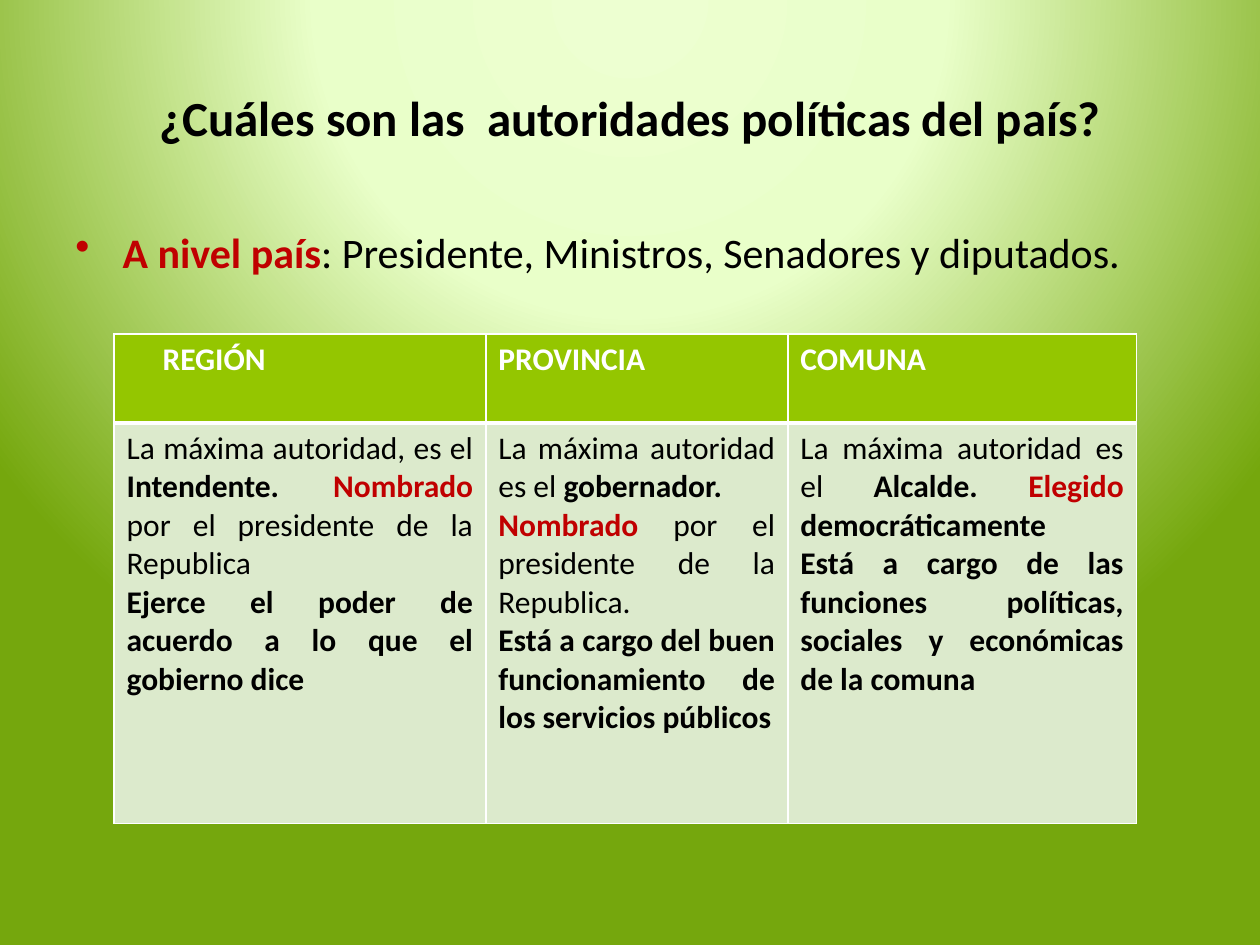
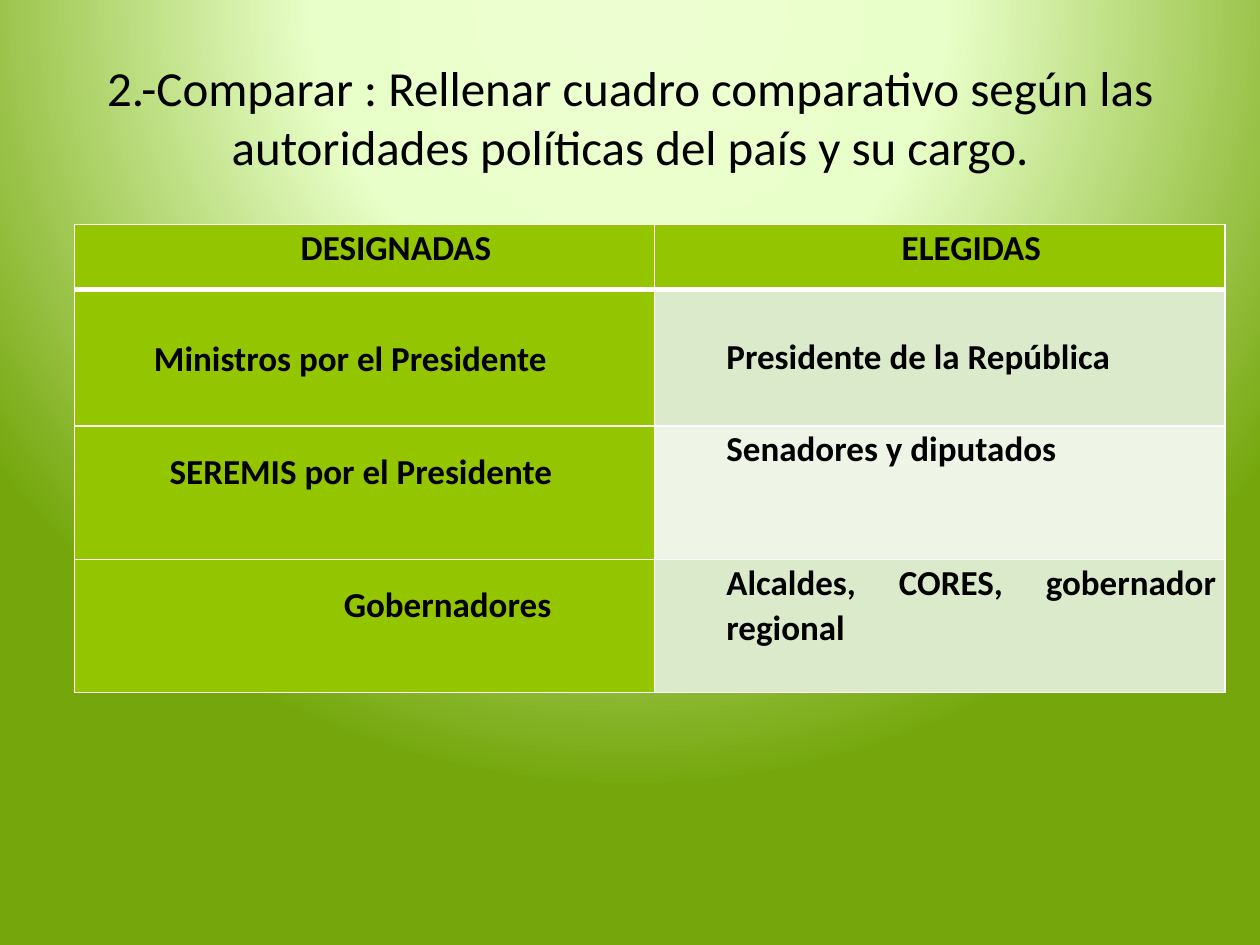
"""Build two slides about the political authorities of a country."""
from dataclasses import dataclass

import lxml.etree
import pptx
import pptx.dml.color
import pptx.enum.text
import pptx.oxml
import pptx.oxml.ns
import pptx.util

Pt = pptx.util.Pt
Align = pptx.enum.text.PP_ALIGN
Anchor = pptx.enum.text.MSO_ANCHOR
qn = pptx.oxml.ns.qn

FONT = "Calibri"
BLACK, WHITE, RED = "000000", "FFFFFF", "C00000"
GREEN, PALE, LIGHT = "94C600", "DCEACC", "EEF5E7"
GLOW = [(0, "EDFFD1"), (40, "E9FFC9"), (100, "75A70D")]


@dataclass
class Run:
    text: str
    bold: bool = True
    color: str = BLACK


@dataclass
class Cell:
    lines: list[list[Run]]
    fill: str
    align: Align = Align.JUSTIFY
    indent: float = 0
    top: float = 3.6


@dataclass
class Grid:
    left: float
    top: float
    cols: list[float]
    rows: list[float]
    cells: list[list[Cell]]
    size: float
    side: float = 7.2
    space: float = 1.0


def hue(code: str) -> pptx.dml.color.RGBColor:
    return pptx.dml.color.RGBColor.from_string(code)


def write(frame, lines: list[list[Run]], *, size: float, align=Align.LEFT,
          space: float = 1.0, indent: float = 0, hang: float = 0,
          before: float = 0, bullet: str = "") -> None:
    frame.word_wrap = True
    for i, line in enumerate(lines):
        para = frame.paragraphs[0] if i == 0 else frame.add_paragraph()
        para.alignment, para.line_spacing = align, space
        para.space_before = Pt(before)
        props = para._p.get_or_add_pPr()
        props.set("marL", str(Pt(indent)))
        props.set("indent", str(Pt(-hang)))
        if bullet:
            mark = lxml.etree.SubElement(props, qn("a:buChar"))
            mark.set("char", bullet)
        for part in line:
            run = para.add_run()
            run.text = part.text
            run.font.name, run.font.size = FONT, Pt(size)
            run.font.bold = part.bold
            run.font.color.rgb = hue(part.color)


def border(cell, widths: dict[str, float]) -> None:
    props = cell._tc.get_or_add_tcPr()
    for i, (side, width) in enumerate(widths.items()):
        line = lxml.etree.Element(qn(f"a:ln{side}"), w=str(Pt(width)))
        fill = lxml.etree.SubElement(line, qn("a:solidFill"))
        lxml.etree.SubElement(fill, qn("a:srgbClr"), val=WHITE)
        props.insert(i, line)


def paint(master) -> None:
    master.background.fill.solid()
    props = master._element.find(".//" + qn("p:bgPr"))
    props.remove(props.find(qn("a:solidFill")))
    grad = lxml.etree.Element(qn("a:gradFill"), rotWithShape="1")
    stops = lxml.etree.SubElement(grad, qn("a:gsLst"))
    for spot, code in GLOW:
        stop = lxml.etree.SubElement(stops, qn("a:gs"), pos=str(spot * 1000))
        lxml.etree.SubElement(stop, qn("a:srgbClr"), val=code)
    shade = lxml.etree.SubElement(grad, qn("a:path"))
    shade.set("path", "circle")
    lxml.etree.SubElement(shade, qn("a:fillToRect"),
                          l="50000", t="-80000", r="50000", b="180000")
    props.insert(0, grad)


def start(deck, title: str, bold: bool):
    slide = deck.slides.add_slide(deck.slide_layouts[5])
    head = slide.shapes.title
    head.left, head.top, head.width, head.height = map(Pt, (36, 21.6, 648, 90))
    frame = head.text_frame
    frame.auto_size = pptx.enum.text.MSO_AUTO_SIZE.NONE
    frame.vertical_anchor = Anchor.MIDDLE
    write(frame, [[Run(title, bold)]], size=28, align=Align.CENTER)
    return slide


def draw(slide, grid: Grid) -> None:
    table = slide.shapes.add_table(
        len(grid.rows), len(grid.cols), Pt(grid.left), Pt(grid.top),
        Pt(sum(grid.cols)), Pt(sum(grid.rows))).table
    table.horz_banding = False
    for col, width in zip(table.columns, grid.cols):
        col.width = Pt(width)
    for r, (row, height) in enumerate(zip(table.rows, grid.rows)):
        row.height = Pt(height)
        for cell, item in zip(row.cells, grid.cells[r]):
            cell.margin_left = cell.margin_right = Pt(grid.side)
            cell.margin_top, cell.margin_bottom = Pt(item.top), 0
            cell.fill.solid()
            cell.fill.fore_color.rgb = hue(item.fill)
            border(cell, {"L": 1, "R": 1, "T": 3 if r == 1 else 1,
                          "B": 3 if r == 0 else 1})
            write(cell.text_frame, item.lines, size=grid.size,
                  align=item.align, space=grid.space, indent=item.indent)


def levels(deck) -> None:
    slide = start(deck, "¿Cuáles son las  autoridades políticas del país?", True)
    box = slide.shapes.add_textbox(Pt(36), Pt(126), Pt(648), Pt(48))
    write(box.text_frame,
          [[Run("A nivel país", color=RED),
            Run(": Presidente, Ministros, Senadores y diputados.", False)]],
          size=24, indent=27, hang=27, before=4.8, bullet="•")
    heads = [Cell([[Run(name, color=WHITE)]], GREEN, Align.LEFT, indent)
             for name, indent in (("REGIÓN", 20.5), ("PROVINCIA", 0), ("COMUNA", 0))]
    region = [
        [Run("La máxima autoridad, es el ", False), Run("Intendente. "),
         Run("Nombrado", color=RED),
         Run(" por el presidente de la Republica", False)],
        [Run("Ejerce el poder de acuerdo a lo que el gobierno dice")]]
    province = [
        [Run("La máxima autoridad es el ", False), Run("gobernador.")],
        [Run("Nombrado", color=RED),
         Run(" por el presidente de la Republica.", False)],
        [Run("Está a cargo del buen funcionamiento de los servicios públicos")]]
    commune = [
        [Run("La máxima autoridad es el ", False), Run("Alcalde. "),
         Run("Elegido", color=RED), Run(" democráticamente")],
        [Run("Está a cargo de las funciones políticas, sociales y "
             "económicas de la comuna")]]
    facts = [Cell(lines, PALE) for lines in (region, province, commune)]
    draw(slide, Grid(65.2, 190.8, [212.4, 172.6, 199.2], [51, 228.8],
                     [heads, facts], 18))


def compare(deck) -> None:
    slide = start(deck, "2.-Comparar : Rellenar cuadro comparativo según las "
                        "autoridades políticas del país y su cargo.", False)
    heads = [Cell([[Run(name)]], GREEN, Align.CENTER, 36, 0)
             for name in ("DESIGNADAS", "ELEGIDAS")]
    pairs = [
        (("Ministros por el Presidente", 40.5, 26),
         ("Presidente de la República", 25, PALE)),
        (("SEREMIS por el Presidente", 49.5, 13),
         ("Senadores y diputados", 0, LIGHT)),
        (("Gobernadores", 149, 13),
         ("Alcaldes, CORES, gobernador regional", 0, PALE))]
    rows = [[Cell([[Run(named)]], GREEN, indent=indent, top=drop),
             Cell([[Run(chosen)]], fill, indent=36, top=top)]
            for (named, indent, drop), (chosen, top, fill) in pairs]
    draw(slide, Grid(42.5, 128.2, [331.6, 326], [37.4, 77.7, 76.3, 76.3],
                     [heads, *rows], 20, side=5, space=1.06))


def main() -> None:
    deck = pptx.Presentation()
    deck.slide_width, deck.slide_height = Pt(720), Pt(540)
    paint(deck.slide_master)
    levels(deck)
    compare(deck)
    deck.save("out.pptx")


if __name__ == "__main__":
    main()
